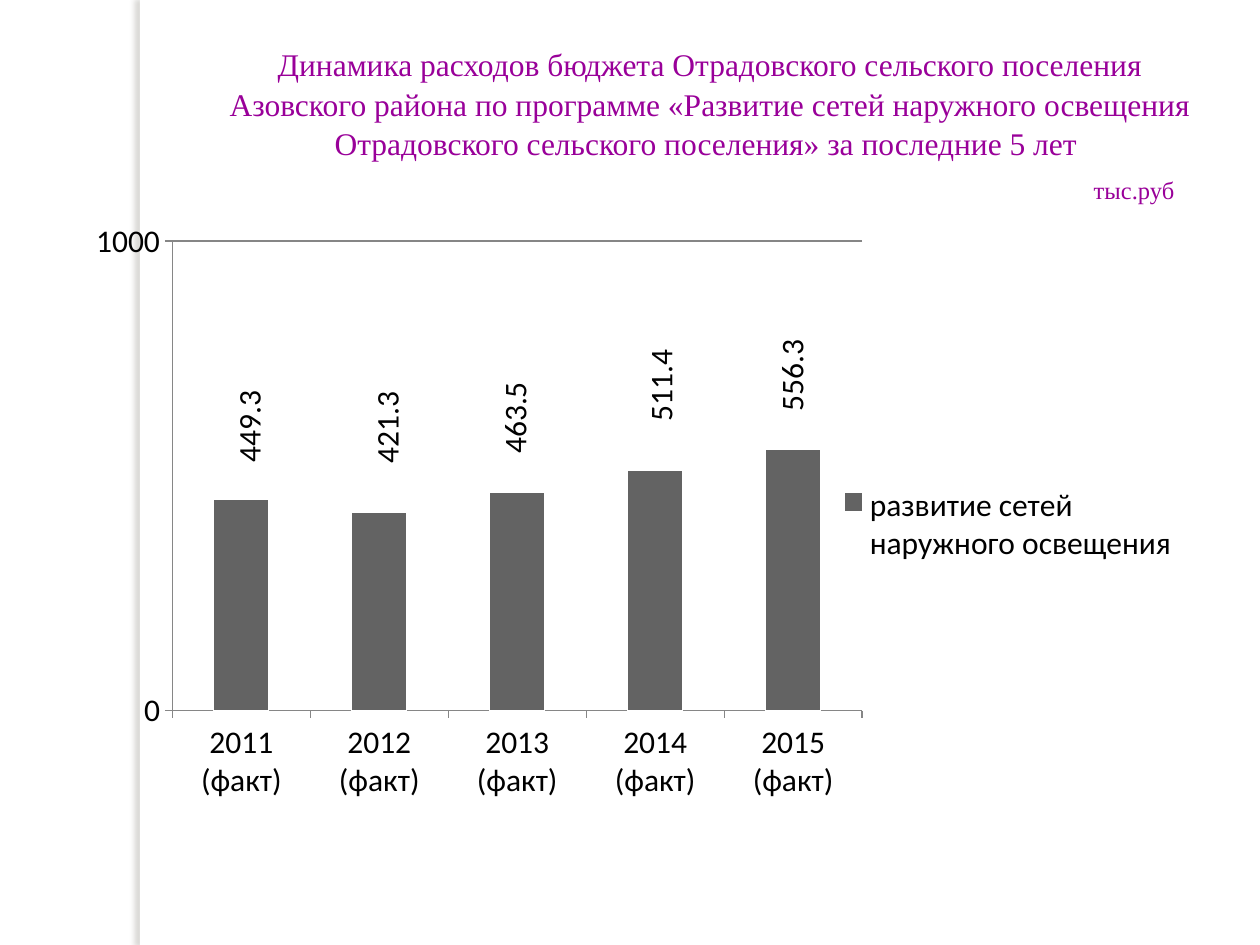
from lxml import etree
from pptx import Presentation
from pptx.chart.data import CategoryChartData
from pptx.dml.color import RGBColor
from pptx.enum.chart import (XL_CHART_TYPE, XL_LABEL_POSITION, XL_LEGEND_POSITION,
                             XL_TICK_LABEL_POSITION, XL_TICK_MARK)
from pptx.enum.shapes import MSO_SHAPE
from pptx.enum.text import PP_ALIGN
from pptx.oxml import parse_xml
from pptx.oxml.ns import nsdecls, qn
from pptx.util import Emu, Pt

PX = 914400 // 126  # one px in EMU
PURPLE, BLACK, WHITE, BAR, AXIS = "990099", "000000", "FFFFFF", "636363", "868686"

TITLE = ("Динамика расходов бюджета Отрадовского сельского поселения Азовского района "
         "по программе «Развитие сетей наружного освещения Отрадовского сельского "
         "поселения» за последние 5 лет ")
SERIES = "развитие сетей наружного освещения"
SPENDING = {2011: 449.3, 2012: 421.3, 2013: 463.5, 2014: 511.4, 2015: 556.3}
LABEL_SHIFTS = [(8, -32), (8, -44), (-2, -34), (6, -44), (-1, -33)]  # px


def px(*lengths):
    return [Emu(length * PX) for length in lengths]


def color(hex_string):
    return RGBColor.from_string(hex_string)


def add_run(paragraph, text, size, font="Times New Roman", ink=PURPLE):
    run = paragraph.add_run()
    run.text = text
    run.font.size, run.font.name = Pt(size), font
    run.font.color.rgb = color(ink)


def style_font(font, size=18):
    font.size, font.name = Pt(size), "Calibri"
    font.color.rgb = color(BLACK)


def add_side_strip(slide, left, top, width, height):
    strip = slide.shapes.add_shape(MSO_SHAPE.RECTANGLE, *px(left, top, width, height))
    strip.shadow.inherit = False
    strip.fill.solid()
    strip.fill.fore_color.rgb = color(WHITE)
    strip.line.fill.background()
    # Soft shadow to the left
    effects = strip._element.spPr.find(qn("a:effectLst"))
    effects.append(parse_xml(
        f'<a:outerShdw {nsdecls("a")} blurRad="{Pt(3)}" dist="{Pt(3)}" dir="10800000" '
        'algn="tl" rotWithShape="0"><a:srgbClr val="736F63"><a:alpha val="25000"/>'
        '</a:srgbClr></a:outerShdw>'))


def add_heading(slide, left, top, width, height):
    frame = slide.shapes.add_textbox(*px(left, top, width, height)).text_frame
    frame.word_wrap = True
    title = frame.paragraphs[0]
    title.alignment = PP_ALIGN.CENTER
    add_run(title, TITLE, 18)

    # The unit ends at a right tab stop
    unit = frame.add_paragraph()
    unit.alignment = PP_ALIGN.LEFT
    tabs = etree.SubElement(unit._p.get_or_add_pPr(), qn("a:tabLst"))
    etree.SubElement(tabs, qn("a:tab"), pos=str(968 * PX), algn="r")
    add_run(unit, "\t", 20)
    add_run(unit, "тыс.руб", 14)
    for paragraph in frame.paragraphs:
        paragraph.line_spacing = 1.05


def manual_layout(x, y, width=None, height=None):
    settings = {"x": x, "y": y}
    if width:
        settings = {"layoutTarget": "inner", "xMode": "edge", "yMode": "edge",
                    **settings, "w": width, "h": height}
    layout = etree.Element(qn("c:layout"))
    manual = etree.SubElement(layout, qn("c:manualLayout"))
    for name, value in settings.items():
        etree.SubElement(manual, qn(f"c:{name}"), val=str(value))
    return layout


def style_axis(axis):
    axis.major_tick_mark = XL_TICK_MARK.OUTSIDE
    axis.minor_tick_mark = XL_TICK_MARK.NONE
    axis.format.line.color.rgb = color(AXIS)
    style_font(axis.tick_labels.font)


def add_value_labels(series, width, height):
    for index, (dx, dy) in enumerate(LABEL_SHIFTS):
        label = series.points[index].data_label
        style_font(label.font)
        label.position = XL_LABEL_POSITION.OUTSIDE_END
    for (dx, dy), element in zip(LABEL_SHIFTS, series._element.iter(qn("c:dLbl"))):
        layout = manual_layout(round(dx / width, 4), round(dy / height, 4))
        element.find(qn("c:idx")).addnext(layout)
        body = element.find(qn("c:txPr")).find(qn("a:bodyPr"))
        body.set("rot", "-5400000")
        body.set("vert", "horz")


def add_spending_chart(slide, left, top, width, height):
    data = CategoryChartData()
    data.categories = [f"{year} (факт)" for year in SPENDING]
    data.add_series(SERIES, SPENDING.values())
    chart = slide.shapes.add_chart(XL_CHART_TYPE.COLUMN_CLUSTERED,
                                   *px(left, top, width, height), data).chart
    style_font(chart.font)
    chart.has_title = False
    chart.has_legend = True
    chart.legend.position = XL_LEGEND_POSITION.RIGHT
    chart.legend.include_in_layout = False
    style_font(chart.legend.font)

    # Plot area
    plot_area = chart._chartSpace.chart.plotArea
    for old in plot_area.findall(qn("c:layout")):
        plot_area.remove(old)
    plot_area.insert(0, manual_layout(0.088, 0.036, 0.617, 0.77))

    # Axes
    years, amounts = chart.category_axis, chart.value_axis
    for axis in (years, amounts):
        style_axis(axis)
    years.tick_label_position = XL_TICK_LABEL_POSITION.LOW
    amounts.minimum_scale, amounts.maximum_scale, amounts.major_unit = 0, 1000, 1000
    amounts.has_major_gridlines = True
    amounts.major_gridlines.format.line.color.rgb = color(AXIS)

    # Columns
    plot = chart.plots[0]
    plot.gap_width, plot.vary_by_categories = 150, False
    spending = plot.series[0]
    spending.format.fill.solid()
    spending.format.fill.fore_color.rgb = color(BAR)
    spending.format.line.color.rgb = color(WHITE)
    add_value_labels(spending, width, height)


def main():
    presentation = Presentation()
    presentation.slide_width, presentation.slide_height = px(1260, 945)
    slide = presentation.slides.add_slide(presentation.slide_layouts[6])
    add_side_strip(slide, 140, 0, 10, 945)
    add_heading(slide, 194, 37, 1032, 170)
    add_spending_chart(slide, 74, 219, 1118, 610)
    presentation.save("out.pptx")


if __name__ == "__main__":
    main()
